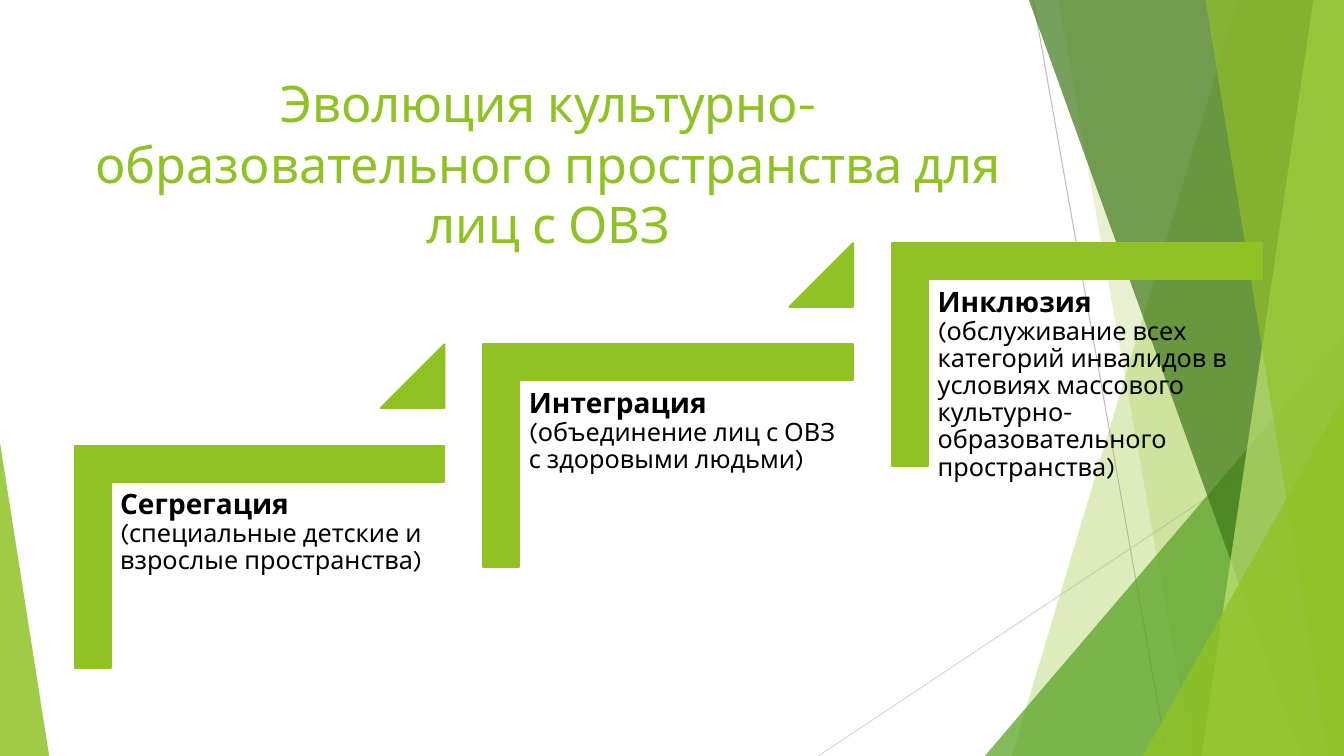
from lxml import etree
from pptx import Presentation
from pptx.dml.color import RGBColor
from pptx.enum import shapes, text
from pptx.oxml import ns
from pptx.util import Cm, Pt

SLIDE_W, SLIDE_H = 33.87, 19.05
GREEN = "90C226"
FONT = "Karla"

STAGES = [
    ("Сегрегация ", "(специальные детские и взрослые пространства)"),
    ("Интеграция ", "(объединение лиц с ОВЗ с здоровыми людьми)"),
    ("Инклюзия ", "(обслуживание всех категорий инвалидов в условиях массового "
                  "культурно-образовательного пространства)"),
]


def color(hex_code):
    return RGBColor.from_string(hex_code)


def paint(shape, hex_code, opacity=100, outline=0):
    """Fill a shape; opacity in percent, outline width in points."""
    shape.shadow.inherit = False
    shape.fill.solid()
    shape.fill.fore_color.rgb = color(hex_code)
    if opacity < 100:
        tint = shape._element.spPr.find(".//" + ns.qn("a:srgbClr"))
        etree.SubElement(tint, ns.qn("a:alpha"), val=str(opacity * 1000))
    if outline:
        shape.line.color.rgb = color(hex_code)
        shape.line.width = Pt(outline)
    else:
        shape.line.fill.background()


def add_triangle(slide, left, top, width, height, apex):
    """Add a triangle whose tip stands at the share apex of its width."""
    triangle = slide.shapes.add_shape(
        shapes.MSO_SHAPE.ISOSCELES_TRIANGLE, Cm(left), Cm(top), Cm(width), Cm(height))
    triangle.adjustments[0] = apex
    return triangle


def add_frame(slide, left, top, width, height):
    frame = slide.shapes.add_textbox(Cm(left), Cm(top), Cm(width), Cm(height)).text_frame
    frame.word_wrap = True
    frame.vertical_anchor = text.MSO_ANCHOR.TOP
    return frame


def add_run(paragraph, words, size, hex_code, bold=False):
    run = paragraph.add_run()
    run.text = words
    run.font.name = FONT
    run.font.size = Pt(size)
    run.font.bold = bold
    run.font.color.rgb = color(hex_code)


def draw_backdrop(slide, width, height):
    """Draw thin lines and translucent facets along the slide edges."""
    for x1, y1, x2, hex_code in [(26.04, 0, 29.41, "BFBFBF"),
                                 (width, 10.24, 20.62, "D9D9D9")]:
        ray = slide.shapes.add_connector(
            shapes.MSO_CONNECTOR.STRAIGHT, Cm(x1), Cm(y1), Cm(x2), Cm(height))
        ray.line.color.rgb = color(hex_code)
        ray.line.width = Pt(0.75)
        etree.SubElement(ray._element.spPr, ns.qn("a:effectLst"))

    def facet(top_x, bottom_x, hex_code, opacity):
        outline = slide.shapes.build_freeform(Cm(top_x), 0)
        outline.add_line_segments([(Cm(width), 0), (Cm(width), Cm(height)),
                                   (Cm(bottom_x), Cm(height))])
        paint(outline.convert_to_shape(), hex_code, opacity)

    def corner_triangle(left, top, triangle_w, apex, hex_code, opacity):
        triangle = add_triangle(slide, left, top, triangle_w, height - top, apex)
        paint(triangle, hex_code, opacity)

    facet(31.19, 25.5, GREEN, 30)
    facet(26.67, 30.05, GREEN, 20)
    corner_triangle(24.82, 8.46, width - 24.82, 1, "54A021", 72)
    facet(25.93, 32.79, "3F7819", 70)
    facet(33.1, 30.28, "C0E474", 70)
    facet(30.38, 33.48, GREEN, 65)
    corner_triangle(28.8, 9.98, width - 28.8, 1, GREEN, 80)
    corner_triangle(0, 11.15, 1.24, 0, GREEN, 85)


def draw_title(slide, left, top, width, height):
    heading = add_frame(slide, left, top, width, height).paragraphs[0]
    heading.alignment = text.PP_ALIGN.CENTER
    add_run(heading, "Эволюция культурно-образовательного пространства для лиц с ОВЗ",
            36, GREEN)


def draw_stage(slide, left, top, width, height, name, details):
    """Draw one step: an angle bracket with its text inside."""
    # The corner preset is turned by 90°, so its sides swap around the centre.
    shift = (width - height) / 2
    bracket = slide.shapes.add_shape(
        shapes.MSO_SHAPE.CORNER, Cm(left + shift), Cm(top - shift), Cm(height), Cm(width))
    bracket.rotation = 90
    bracket.adjustments[0] = bracket.adjustments[1] = 0.161
    paint(bracket, GREEN, outline=1.5)

    frame = add_frame(slide, left + 0.94, top + 0.92, width - 0.91, 7.37)
    frame.margin_left = frame.margin_right = Cm(0.21)
    frame.margin_top = frame.margin_bottom = Cm(0.21)
    caption = frame.paragraphs[0]
    caption.line_spacing = 0.9
    add_run(caption, name, 20, "000000", bold=True)
    add_run(caption, details, 18, "000000")


def draw_staircase(slide, left, top, step_x, step_y):
    """Draw the stages rising from the lower left, with a triangle between steps."""
    stage_w, stage_h, mark = 9.32, 5.61, 1.6
    for i, (name, details) in enumerate(STAGES):
        x, y = left + i * step_x, top - i * step_y
        draw_stage(slide, x, y, stage_w, stage_h, name, details)
        if i < len(STAGES) - 1:
            triangle = add_triangle(slide, x + stage_w - mark, y - step_y, mark, mark, 1)
            paint(triangle, GREEN, outline=1.5)


def main():
    deck = Presentation()
    deck.slide_width, deck.slide_height = Cm(SLIDE_W), Cm(SLIDE_H)
    slide = deck.slides.add_slide(deck.slide_layouts[6])
    draw_backdrop(slide, SLIDE_W, SLIDE_H)
    draw_title(slide, 1.88, 1.7, 23.88, 3.66)
    draw_staircase(slide, 1.88, 11.23, 10.3, 2.55)
    deck.save("out.pptx")


if __name__ == "__main__":
    main()
